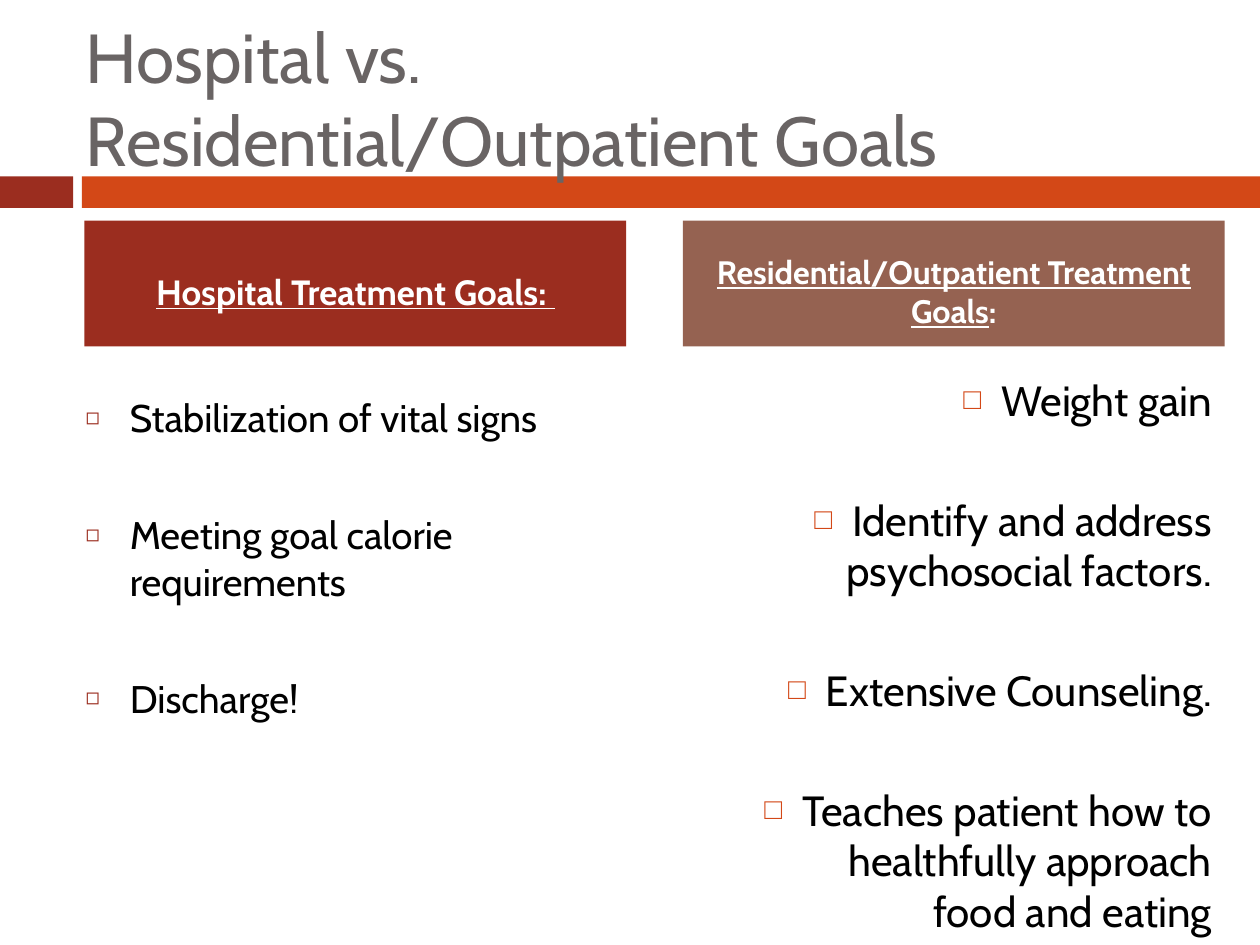
from lxml.etree import SubElement
from pptx import Presentation
from pptx.dml.color import RGBColor
from pptx.enum.shapes import MSO_SHAPE
from pptx.enum.text import MSO_ANCHOR, MSO_AUTO_SIZE, PP_ALIGN
from pptx.oxml.ns import qn
from pptx.util import Inches, Pt

RED, ORANGE, BROWN = "9B2D1F", "D34817", "956251"


def rgb(value):
    return RGBColor.from_string(value)


def add_run(p, text, size, color, bold=False, underline=False):
    r = p.add_run()
    r.text = text
    f = r.font
    f.name, f.size, f.bold, f.underline = "Cabin", Pt(size), bold, underline
    f.color.rgb = rgb(color)


prs = Presentation()
prs.slide_width, prs.slide_height = Inches(10), Inches(7.5)
s = prs.slides.add_slide(prs.slide_layouts[4])  # Comparison
title, left_head, left_body, right_head, right_body = s.placeholders

# Place the placeholders
for sp, x, y, w, h in [
    (title, 0.58, 0.3, 8.92, 0.95),
    (left_head, 0.67, 1.75, 4.3, 1),
    (left_body, 0.58, 3.08, 4.3, 3.82),
    (right_head, 5.42, 1.75, 4.3, 1),
    (right_body, 5.42, 2.92, 4.3, 3.82),
]:
    sp.left, sp.top, sp.width, sp.height = Inches(x), Inches(y), Inches(w), Inches(h)
    sp.text_frame.auto_size = MSO_AUTO_SIZE.NONE
    sp.text_frame.word_wrap = True

# Band under the title, behind the text
for x, w, color in [(0, 0.58, RED), (0.65, 9.35, ORANGE)]:
    bar = s.shapes.add_shape(MSO_SHAPE.RECTANGLE, Inches(x), Inches(1.4), Inches(w), Inches(0.25))
    bar.shadow.inherit = False
    bar.fill.solid()
    bar.fill.fore_color.rgb = rgb(color)
    bar.line.fill.background()
    s.shapes._spTree.insert(2, bar._element)

# Title
title.text_frame.vertical_anchor = MSO_ANCHOR.MIDDLE
p = title.text_frame.paragraphs[0]
p.alignment = PP_ALIGN.LEFT
add_run(p, "Hospital vs. ", 39.6, "696464")
p.add_line_break()
add_run(p, "Residential/Outpatient Goals", 39.6, "696464")

# Column headings: (text, underlined)
for sp, color, size, runs in [
    (left_head, RED, 20, [("Hospital Treatment Goals: ", True)]),
    (right_head, BROWN, 18.5, [("Residential/Outpatient Treatment Goals", True), (":", False)]),
]:
    sp.fill.solid()
    sp.fill.fore_color.rgb = rgb(color)
    tf = sp.text_frame
    tf.vertical_anchor = MSO_ANCHOR.MIDDLE
    tf.margin_top = Inches(0.17)
    p = tf.paragraphs[0]
    p.alignment = PP_ALIGN.CENTER
    p.space_before = Pt(0)
    for text, underline in runs:
        add_run(p, text, size, "FFFFFF", True, underline)

# Bulleted goals
left_goals = ["Stabilization of vital signs", "Meeting goal calorie requirements", "Discharge!"]
right_goals = [
    "Weight gain",
    "Identify and address psychosocial factors.",
    "Extensive Counseling.",
    "Teaches patient how to healthfully approach food and eating",
]
for sp, goals, size, align, level, margin, hang, gap, mark, color, scale in [
    (left_body, left_goals, 22, PP_ALIGN.LEFT, 0, 0.35, 0.35, 40.5, "◻", RED, 60),
    (right_body, right_goals, 24.1, PP_ALIGN.RIGHT, 1, 0.7, 0.3, 39.5, "□", ORANGE, 70),
]:
    tf = sp.text_frame
    tf.vertical_anchor = MSO_ANCHOR.TOP
    for i, goal in enumerate(goals):
        p = tf.add_paragraph() if i else tf.paragraphs[0]
        p.level, p.alignment = level, align
        p.space_before = Pt(gap if i else 0)
        add_run(p, goal, size, "000000")
        pPr = p._p.get_or_add_pPr()
        pPr.set("marL", str(Inches(margin)))
        pPr.set("indent", str(-Inches(hang)))
        SubElement(SubElement(pPr, qn("a:buClr")), qn("a:srgbClr"), val=color)
        SubElement(pPr, qn("a:buSzPct"), val=str(scale * 1000))
        SubElement(pPr, qn("a:buChar"), char=mark)

prs.save("out.pptx")
